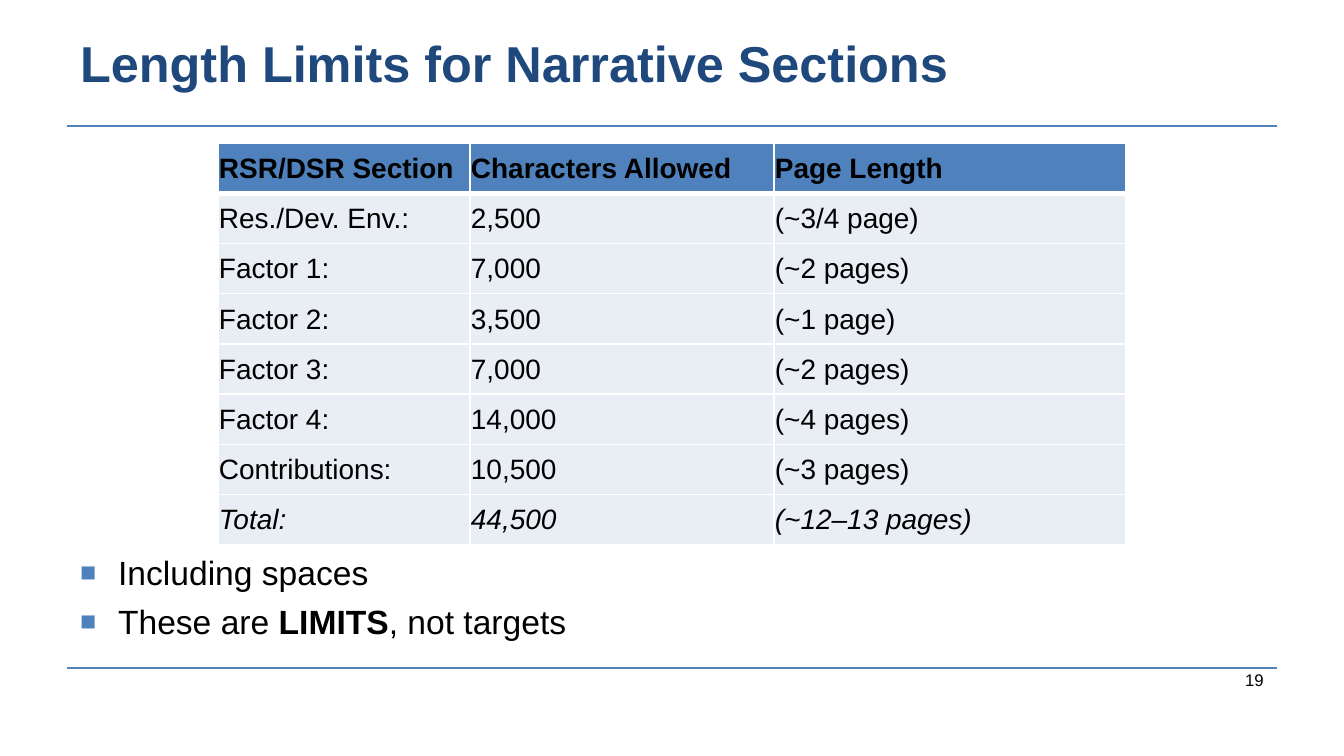
import dataclasses
import typing

import lxml.etree
import pptx
import pptx.dml.color
import pptx.enum.shapes
import pptx.enum.text
import pptx.oxml.ns
import pptx.util

SCALE = 914400 / 134.4  # EMU in one px
BLUE, NAVY, PALE, BLACK, WHITE = "4F81BD", "1F497D", "E9EDF4", "000000", "FFFFFF"
ALIGN = pptx.enum.text.PP_ALIGN
ANCHOR = pptx.enum.text.MSO_ANCHOR
qn = pptx.oxml.ns.qn


@dataclasses.dataclass
class Run:
    text: str
    size: int
    color: str = BLACK
    bold: bool = False
    italic: bool = False


@dataclasses.dataclass
class Box:
    left: int
    top: int
    width: int
    height: int
    lines: list[list[Run]]
    anchor: typing.Any = ANCHOR.MIDDLE
    align: typing.Any = ALIGN.LEFT
    bullet: bool = False


def px(n: float) -> int:
    return pptx.util.Emu(round(n * SCALE))


def rgb(code: str) -> pptx.dml.color.RGBColor:
    return pptx.dml.color.RGBColor.from_string(code)


def apply(part: typing.Any, form: dict[str, typing.Any]) -> None:
    for key, value in form.items():
        setattr(part, key, value)


def add_run(para: typing.Any, item: Run) -> None:
    run = para.add_run()
    run.text = item.text
    apply(run.font, {"name": "Arial", "size": pptx.util.Pt(item.size),
                     "bold": item.bold, "italic": item.italic})
    run.font.color.rgb = rgb(item.color)


def add_bullet(para: typing.Any) -> None:
    props = para._p.get_or_add_pPr()
    props.set("marL", str(px(38)))
    props.set("indent", str(px(-38)))
    color = lxml.etree.SubElement(props, qn("a:buClr"))
    lxml.etree.SubElement(color, qn("a:srgbClr"), val=BLUE)
    lxml.etree.SubElement(props, qn("a:buSzPct"), val="80000")
    lxml.etree.SubElement(props, qn("a:buFont"), typeface="Arial")
    lxml.etree.SubElement(props, qn("a:buChar"), char="■")


def add_box(slide: typing.Any, box: Box) -> None:
    shape = slide.shapes.add_textbox(
        px(box.left), px(box.top), px(box.width), px(box.height))
    frame = shape.text_frame
    apply(frame, {"word_wrap": True, "vertical_anchor": box.anchor,
                  "margin_top": 0 if box.bullet else px(7)})
    for i, line in enumerate(box.lines):
        para = frame.add_paragraph() if i else frame.paragraphs[0]
        para.alignment = box.align
        if i:
            para.space_before = pptx.util.Pt(4.5)
        if box.bullet:
            add_bullet(para)
        for item in line:
            add_run(para, item)


def add_rule(slide: typing.Any, y: int) -> None:
    rule = slide.shapes.add_connector(
        pptx.enum.shapes.MSO_CONNECTOR.STRAIGHT, px(67), px(y), px(1277), px(y))
    rule.line.color.rgb = rgb(BLUE)
    rule.line.width = pptx.util.Pt(1.5)
    lxml.etree.SubElement(rule._element.spPr, qn("a:effectLst"))


def add_edge(cell: typing.Any, side: str, points: int) -> None:
    edge = lxml.etree.SubElement(cell._tc.get_or_add_tcPr(), qn(f"a:ln{side}"),
                                 w=str(pptx.util.Pt(points)))
    fill = lxml.etree.SubElement(edge, qn("a:solidFill"))
    lxml.etree.SubElement(fill, qn("a:srgbClr"), val=WHITE)


def add_grid(slide: typing.Any, rows: list[tuple[str, str, str]]) -> None:
    widths = (252, 304, 352)
    high = px(402)
    table = slide.shapes.add_table(
        len(rows), len(widths), px(218), px(143), px(sum(widths)), high).table
    table.horz_banding = False
    for col, width in zip(table.columns, widths):
        col.width = px(width)
    last = len(rows) - 1
    for r, texts in enumerate(rows):
        table.rows[r].height = high // len(rows)
        for c, text in enumerate(texts):
            cell = table.cell(r, c)
            apply(cell, {"margin_left": px(1), "margin_right": px(1),
                         "margin_top": px(1), "margin_bottom": 0,
                         "vertical_anchor": ANCHOR.MIDDLE})
            for side in "LRTB":
                thick = (r, side) in ((0, "B"), (1, "T"))
                add_edge(cell, side, 3 if thick else 1)
            cell.fill.solid()
            cell.fill.fore_color.rgb = rgb(PALE if r else BLUE)
            add_run(cell.text_frame.paragraphs[0],
                    Run(text, 15, bold=r == 0, italic=r == last))


ROWS = [
    ("RSR/DSR Section", "Characters Allowed", "Page Length"),
    ("Res./Dev. Env.:", "2,500", "(~3/4 page)"),
    ("Factor 1:", "7,000", "(~2 pages)"),
    ("Factor 2:", "3,500", "(~1 page)"),
    ("Factor 3:", "7,000", "(~2 pages)"),
    ("Factor 4:", "14,000", "(~4 pages)"),
    ("Contributions:", "10,500", "(~3 pages)"),
    ("Total:", "44,500", "(~12–13 pages)"),
]
TITLE = Box(67, 31, 1210, 62,
            [[Run("Length Limits for Narrative Sections", 27, NAVY, bold=True)]])
NOTES = Box(67, 552, 1210, 104,
            [[Run("Including spaces", 18)],
             [Run("These are ", 18), Run("LIMITS", 18, bold=True),
              Run(", not targets", 18)]],
            anchor=ANCHOR.TOP, bullet=True)
NUMBER = Box(964, 646, 313, 51, [[Run("19", 9)]],
             anchor=ANCHOR.BOTTOM, align=ALIGN.RIGHT)


def main() -> None:
    deck = pptx.Presentation()
    apply(deck, {"slide_width": px(1344), "slide_height": px(756)})
    slide = deck.slides.add_slide(deck.slide_layouts[6])

    # Rules above and below the content
    for y in (668, 126):
        add_rule(slide, y)

    # Title, bullets, limits table and page number
    add_box(slide, TITLE)
    add_box(slide, NOTES)
    add_grid(slide, ROWS)
    add_box(slide, NUMBER)

    deck.save("out.pptx")


if __name__ == "__main__":
    main()
